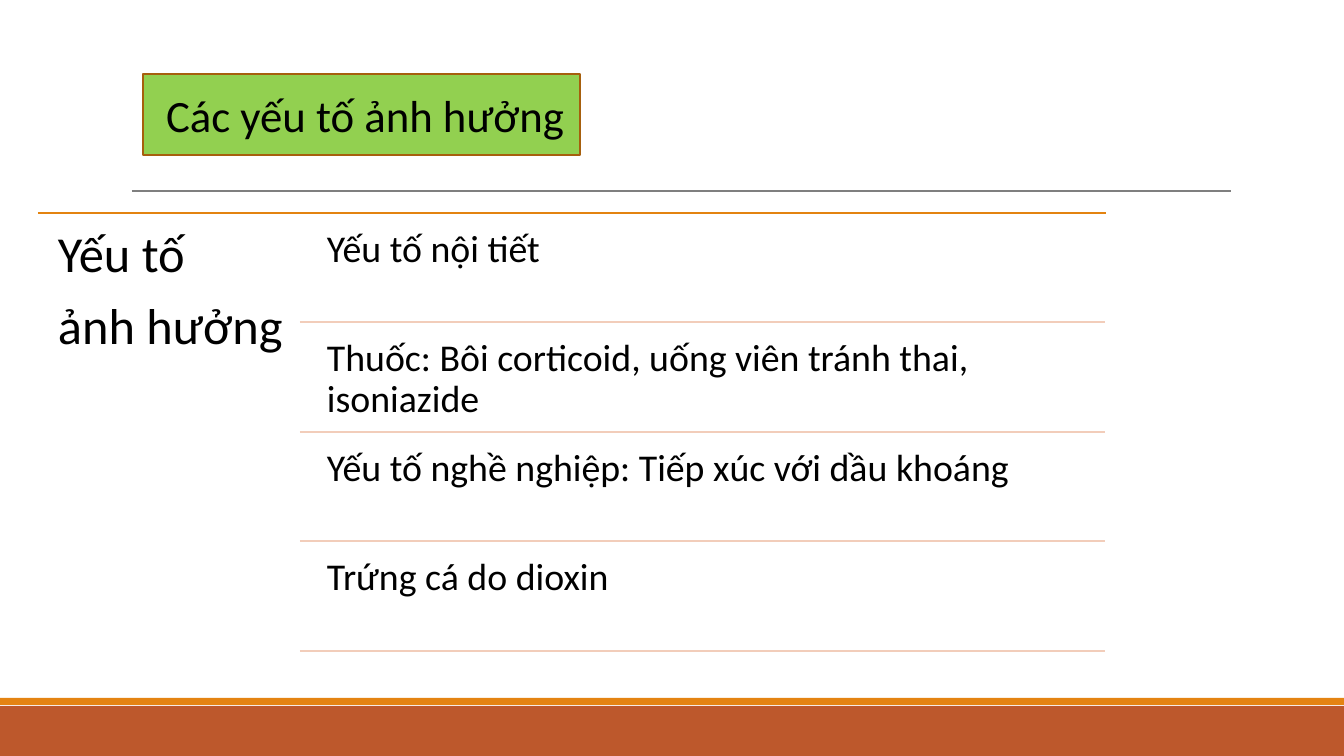
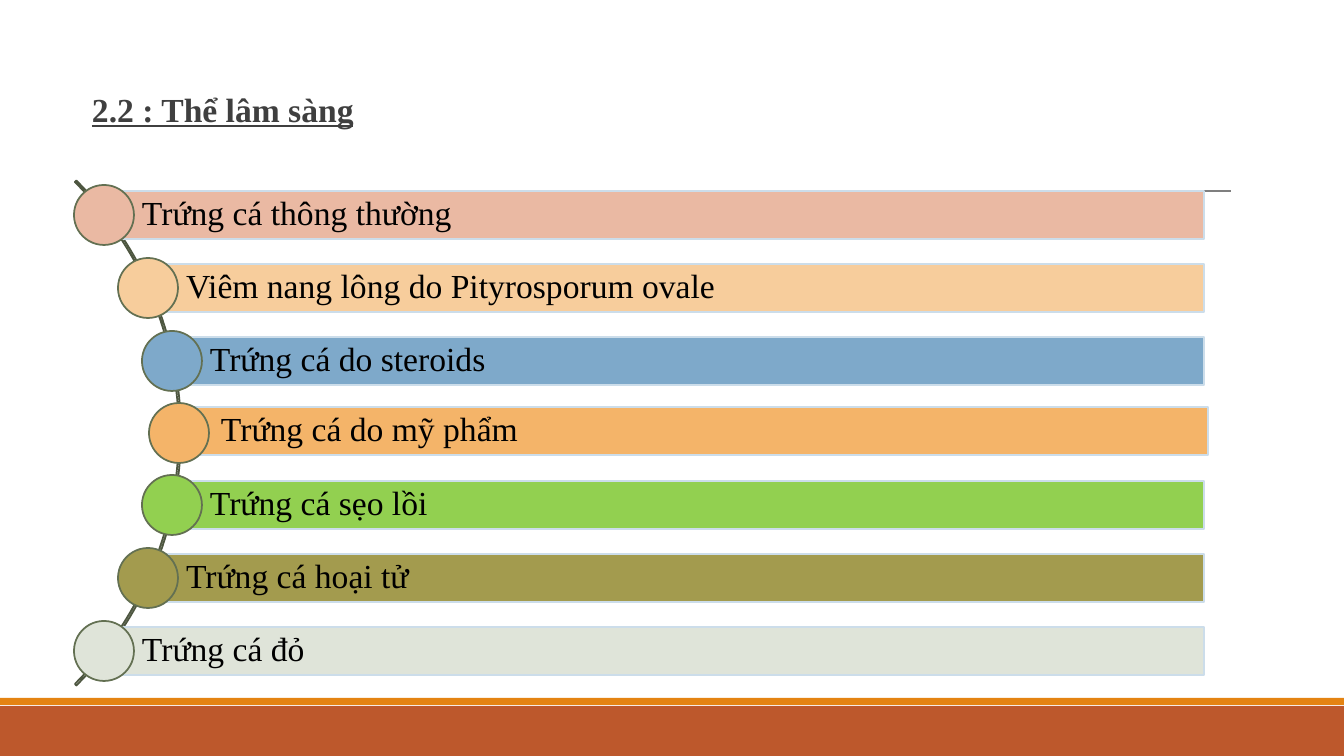
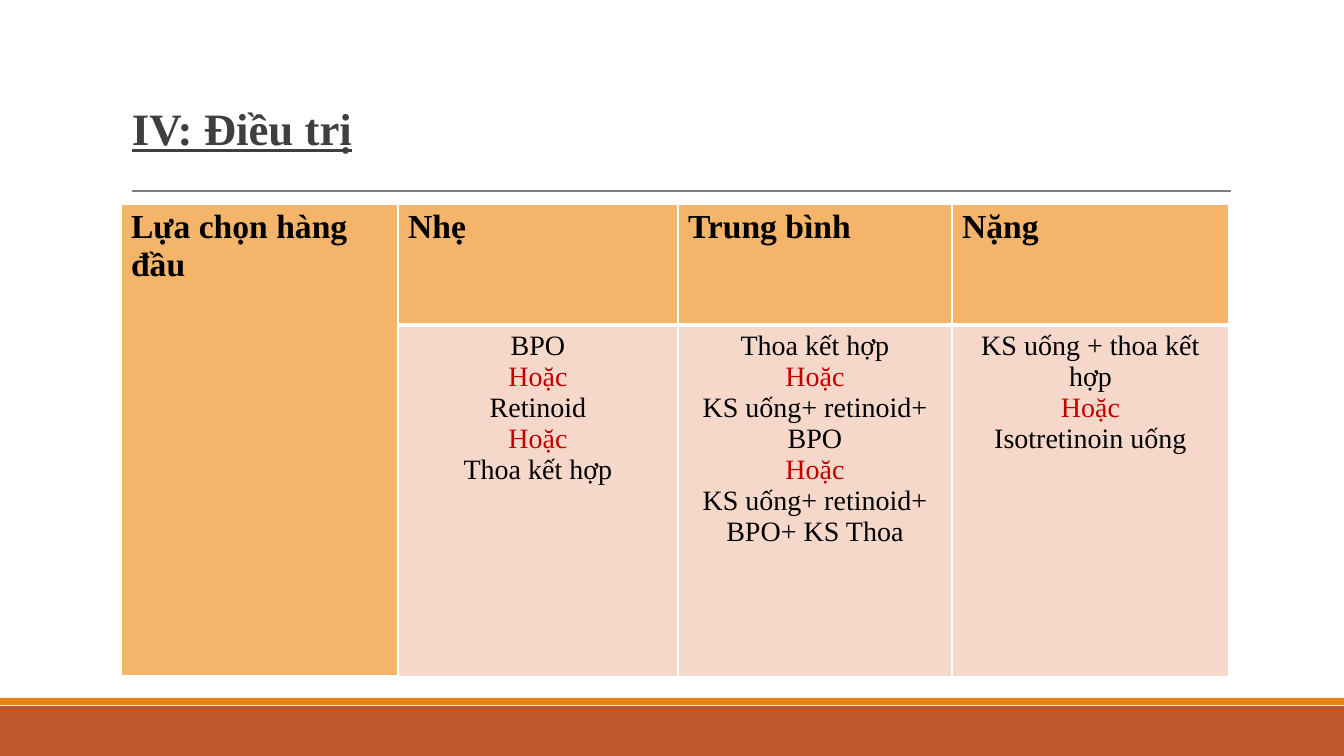
from lxml.etree import SubElement
from pptx import Presentation
from pptx.dml.color import RGBColor
from pptx.enum.shapes import MSO_CONNECTOR, MSO_SHAPE as SHAPE
from pptx.enum.text import MSO_ANCHOR as ANCHOR, MSO_AUTO_SIZE, PP_ALIGN as ALIGN
from pptx.oxml import parse_xml
from pptx.oxml.ns import nsdecls, qn
from pptx.util import Pt

PX = 9072  # EMU in one px
WIDTH, HEIGHT = 1344, 756
SANS, SERIF = "Calibri", "Times New Roman"
BLACK, GREY, RED = "000000", "3F3F3F", "C00000"
GREEN, ORANGE, PEACH = "92D050", "F4B469", "F2CDBA"
rgb = RGBColor.from_string


def draw(page, kind, left, top, width, height, fill=None, line=None):
    shape = page.shapes.add_shape(kind, left * PX, top * PX, width * PX, height * PX)
    shape.shadow.inherit = False
    if fill:
        shape.fill.solid()
        shape.fill.fore_color.rgb = rgb(fill)
    else:
        shape.fill.background()
    if line:
        shape.line.color.rgb = rgb(line)
        shape.line.width = Pt(1.25)
    else:
        shape.line.fill.background()
    return shape


def write(frame, lines, size, face, color=BLACK, bold=False, underline=False,
          align=ALIGN.LEFT, spacing=1.0, before=0, margins=None):
    """Fill a text frame, one paragraph a line; margins are left, top, right, bottom."""
    frame.word_wrap = True
    if margins:
        (frame.margin_left, frame.margin_top,
         frame.margin_right, frame.margin_bottom) = [margin * PX for margin in margins]
    for index, text in enumerate(lines):
        para = frame.add_paragraph() if index else frame.paragraphs[0]
        para.alignment = align
        para.line_spacing = spacing
        para.space_before = Pt(before if index else 0)
        span = para.add_run()
        span.text = text
        span.font.size = Pt(size)
        span.font.name = face
        span.font.bold = bold
        span.font.underline = underline
        span.font.color.rgb = rgb(color)


deck = Presentation()
deck.slide_width, deck.slide_height = WIDTH * PX, HEIGHT * PX

# Shared frame: bands, rules and titles
plain_title = dict(face=SANS, margins=(23, 5, 0, 5))
serif_title = dict(face=SERIF, color=GREY, bold=True, underline=True,
                   spacing=0.85, margins=(10, 5, 10, 5))
title_rule = (132, 1231, 191, "7F7F7F", 0.75)
factor_rules = [(38, 1106, 213, "E38310", 1.25)]
factor_rules += [(300, 1105, 213 + 219 * row // 2, PEACH, 1.25) for row in range(1, 5)]
outlines = [
    ("Các yếu tố ảnh hưởng", (143, 74, 437, 81), 32, ANCHOR.MIDDLE, plain_title, factor_rules),
    ("2.2 : Thể lâm sàng", (82, 77, 1109, 57), 24, ANCHOR.BOTTOM, serif_title, []),
    ("IV: Điều trị", (122, 0, 1109, 160), 32, ANCHOR.BOTTOM, serif_title, []),
]
pages = []
for heading, place, size, anchor, style, extra_rules in outlines:
    page = deck.slides.add_slide(deck.slide_layouts[5])
    pages.append(page)
    draw(page, SHAPE.RECTANGLE, 0, 706, WIDTH, 50, "BD582C")
    draw(page, SHAPE.RECTANGLE, 0, 698, WIDTH, 7, "E48312")
    for start, end, y, color, weight in [title_rule] + extra_rules:
        rule = page.shapes.add_connector(MSO_CONNECTOR.STRAIGHT,
                                         start * PX, y * PX, end * PX, y * PX)
        rule.line.color.rgb = rgb(color)
        rule.line.width = Pt(weight)
        SubElement(rule._element.spPr, qn("a:effectLst"))
    title = page.shapes.title
    title.left, title.top, title.width, title.height = [length * PX for length in place]
    title.text_frame.auto_size = MSO_AUTO_SIZE.NONE
    title.text_frame.vertical_anchor = anchor
    write(title.text_frame, [heading], size, **style)

factors_page, forms_page, treatment_page = pages

# Influencing factors
badge = factors_page.shapes.title
badge.fill.solid()
badge.fill.fore_color.rgb = rgb(GREEN)
badge.line.color.rgb = rgb("A65F0D")
badge.line.width = Pt(1.25)

box = factors_page.shapes.add_textbox(43 * PX, 214 * PX, 262 * PX, 444 * PX)
write(box.text_frame, ["Yếu tố", "ảnh hưởng"], 36, SANS,
      spacing=0.9, before=12.6, margins=(15, 15, 15, 15))
factors = [
    "Yếu tố nội tiết",
    "Thuốc: Bôi corticoid, uống viên tránh thai, isoniazide",
    "Yếu tố nghề nghiệp: Tiếp xúc với dầu khoáng",
    "Trứng cá do dioxin",
]
for row, factor in enumerate(factors):
    top = 219 + 219 * row // 2
    box = factors_page.shapes.add_textbox(316 * PX, top * PX, 790 * PX, 104 * PX)
    write(box.text_frame, [factor], 27, SANS, spacing=0.9, margins=(11, 11, 11, 11))

# Clinical forms: circles follow the arc, bars start at the circle centres
ARC_X, ARC_Y, ARC_SIZE, ORBIT = -176, 433, 714, 355
BAR_RIGHT, BAR_HEIGHT, CIRCLE = 1204, 48, 60
arc = draw(forms_page, SHAPE.BLOCK_ARC, ARC_X - ARC_SIZE // 2, ARC_Y - ARC_SIZE // 2,
           ARC_SIZE, ARC_SIZE, line="4D5640")
for index, value in enumerate((189, 27, 0.003)):
    arc.adjustments[index] = value

forms = [
    ("Trứng cá thông thường", "EAB9A3"),
    ("Viêm nang lông do Pityrosporum ovale", "F7CD9C"),
    ("Trứng cá do steroids", "7EA9CA"),
    ("Trứng cá do mỹ phẩm", ORANGE),
    ("Trứng cá sẹo lồi", GREEN),
    ("Trứng cá hoại tử", "A39B4E"),
    ("Trứng cá đỏ", "DFE4D9"),
]
middle = len(forms) // 2
for index, (form, color) in enumerate(forms):
    drop = round(72.5 * (index - middle))
    x = ARC_X + round((ORBIT ** 2 - drop ** 2) ** 0.5)
    y = ARC_Y + drop
    shift_x, shift_y = (4, -2) if index == middle else (0, 0)
    bar = draw(forms_page, SHAPE.RECTANGLE, x + shift_x, y - BAR_HEIGHT // 2 + shift_y,
               BAR_RIGHT - x, BAR_HEIGHT, color, "CCDDEA")
    bar.text_frame.vertical_anchor = ANCHOR.MIDDLE
    write(bar.text_frame, [form], 24, SERIF, spacing=0.9, margins=(38, 7, 7, 7))
    draw(forms_page, SHAPE.OVAL, x - CIRCLE // 2, y - CIRCLE // 2,
         CIRCLE, CIRCLE, color, "637052")

# Treatment table
OR = "Hoặc"
headers = ["Lựa chọn hàng đầu", "Nhẹ", "Trung bình", "Nặng"]
choices = [
    [],
    ["BPO", OR, "Retinoid", OR, "Thoa kết hợp"],
    ["Thoa kết hợp", OR, "KS uống+ retinoid+ BPO", OR, "KS uống+ retinoid+ BPO+ KS Thoa"],
    ["KS uống + thoa kết hợp", OR, "Isotretinoin uống"],
]
columns, rows = (277, 280, 274, 277), (121, 352)
table = treatment_page.shapes.add_table(len(rows), len(columns), 121 * PX, 204 * PX,
                                        sum(columns) * PX, sum(rows) * PX).table
table.first_row = table.horz_banding = False
for column, width in zip(table.columns, columns):
    column.width = width * PX
for row, height in zip(table.rows, rows):
    row.height = height * PX
table.cell(0, 0).merge(table.cell(1, 0))

for column, (header, choice) in enumerate(zip(headers, choices)):
    head, body = table.cell(0, column), table.cell(1, column)
    write(head.text_frame, [header], 24, SERIF, bold=True)
    write(body.text_frame, choice, 20, SERIF, align=ALIGN.CENTER)
    for para in body.text_frame.paragraphs:
        if para.text == OR:
            para.runs[0].font.color.rgb = rgb(RED)
    for cell, fill, thick_side in ((head, ORANGE, "B"), (body, "F5D8CA", "T")):
        cell.fill.solid()
        cell.fill.fore_color.rgb = rgb(fill)
        for position, side in enumerate("LRTB"):
            weight = Pt(3 if side == thick_side else 1)
            cell._tc.get_or_add_tcPr().insert(position, parse_xml(
                f'<a:ln{side} {nsdecls("a")} w="{weight}"><a:solidFill>'
                f'<a:srgbClr val="FFFFFF"/></a:solidFill></a:ln{side}>'))

deck.save("out.pptx")
